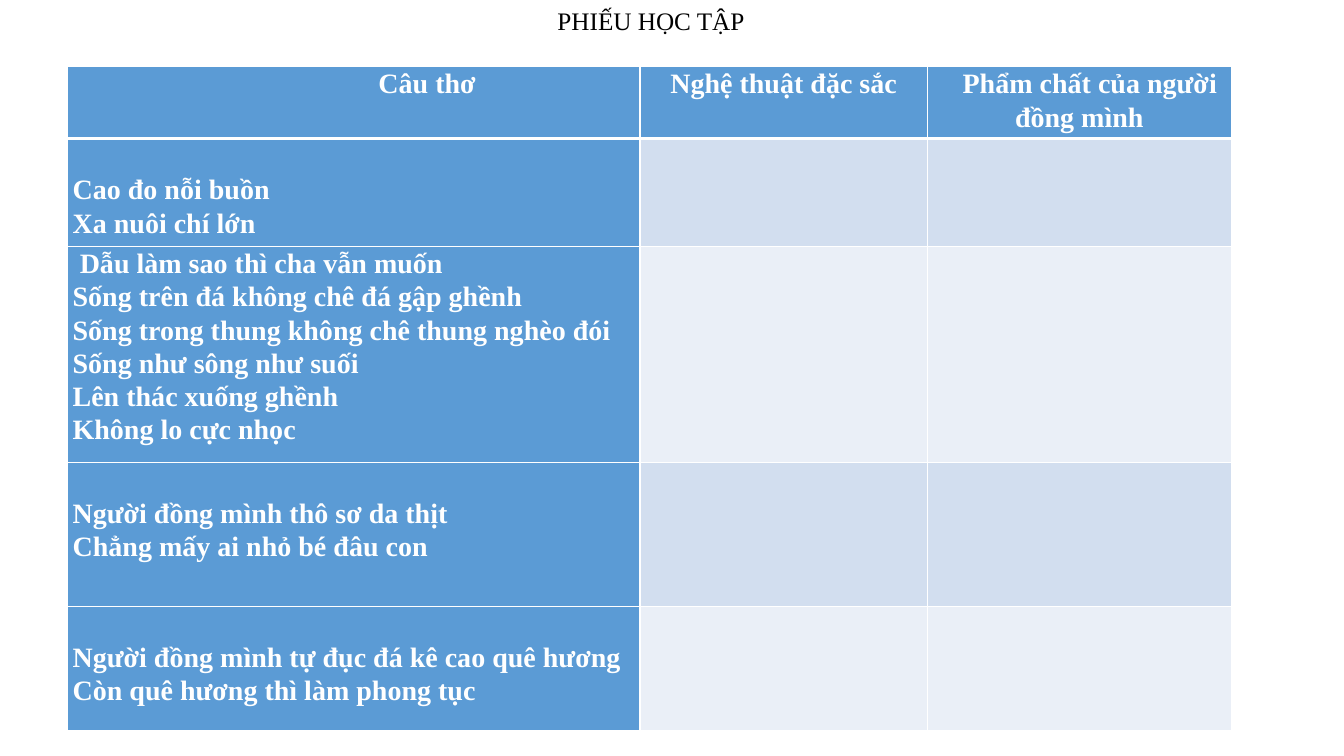
from pptx import Presentation
from pptx.dml.color import RGBColor
from pptx.enum.text import MSO_AUTO_SIZE as AutoSize, PP_ALIGN as Align
from pptx.oxml import parse_xml
from pptx.oxml.ns import nsdecls
from pptx.util import Cm, Pt

BLUE, WHITE, BLACK = "5B9BD5", "FFFFFF", "000000"
BANDS = ("D2DEEF", "EAEFF7")

COL_WIDTHS = (14.43, 7.24, 7.66)
ROW_HEIGHTS = (1.78, 2.72, 5.42, 3.63, 3.13)

# Heading and first-line indent
HEADINGS = [
    ("Câu thơ", 3.7),
    ("Nghệ thuật đặc sắc", 0),
    ("Phẩm chất của người đồng mình", 0.53),
]

# Verses, space above them and first-line indent
VERSES = [
    ("Cao đo nỗi buồn\nXa nuôi chí lớn", 0.86, 0),
    ("Dẫu làm sao thì cha vẫn muốn\n"
     "Sống trên đá không chê đá gập ghềnh\n"
     "Sống trong thung không chê thung nghèo đói\n"
     "Sống như sông như suối\n"
     "Lên thác xuống ghềnh\n"
     "Không lo cực nhọc", 0, 0.18),
    ("Người đồng mình thô sơ da thịt\nChẳng mấy ai nhỏ bé đâu con", 0.86, 0),
    ("Người đồng mình tự đục đá kê cao quê hương\n"
     "Còn quê hương thì làm phong tục", 0.86, 0),
]


def rgb(value):
    return RGBColor.from_string(value)


def write(tf, text, font="Times New Roman", size=20, color=WHITE, bold=True,
          align=Align.LEFT, spacing=1.07, indent=0):
    """Write one paragraph per line; the indent applies to the first."""
    for i, line in enumerate(text.split("\n")):
        p = tf.add_paragraph() if i else tf.paragraphs[0]
        p.alignment, p.line_spacing = align, spacing
        if indent and i == 0:
            p._p.get_or_add_pPr().set("indent", str(Cm(indent)))
        r = p.add_run()
        r.text = line
        r.font.name, r.font.size, r.font.bold = font, Pt(size), bold
        r.font.color.rgb = rgb(color)


class Worksheet:
    def __init__(self, prs):
        self.s = prs.slides.add_slide(prs.slide_layouts[6])

    def title(self, text, x, y, w, h):
        tf = self.s.shapes.add_textbox(Cm(x), Cm(y), Cm(w), Cm(h)).text_frame
        tf.word_wrap = False
        tf.auto_size = AutoSize.SHAPE_TO_FIT_TEXT
        write(tf, text, size=18, color=BLACK, bold=False, spacing=1, indent=0.16)

    def table(self, x, y, widths, heights):
        table = self.s.shapes.add_table(
            len(heights), len(widths), Cm(x), Cm(y),
            Cm(sum(widths)), Cm(sum(heights))).table
        for col, w in zip(table.columns, widths):
            col.width = Cm(w)
        for row, h in zip(table.rows, heights):
            row.height = Cm(h)
        return table

    def cell(self, cell, fill, top=1, bottom=1, space=0):
        cell.margin_left = cell.margin_right = Cm(0.13)
        cell.margin_top, cell.margin_bottom = Cm(space), 0
        # Borders come before the fill in the cell properties
        for side, width in zip("LRTB", (1, 1, top, bottom)):
            cell._tc.get_or_add_tcPr().append(parse_xml(
                f'<a:ln{side} {nsdecls("a")} w="{Pt(width)}"><a:solidFill>'
                f'<a:srgbClr val="{WHITE}"/></a:solidFill></a:ln{side}>'))
        cell.fill.solid()
        cell.fill.fore_color.rgb = rgb(fill)
        return cell.text_frame


def main():
    prs = Presentation()
    prs.slide_width, prs.slide_height = Cm(33.87), Cm(19.05)
    sheet = Worksheet(prs)

    sheet.title("PHIẾU HỌC TẬP", 13.64, 0, 5.44, 1.02)
    table = sheet.table(1.7, 1.68, COL_WIDTHS, ROW_HEIGHTS)

    # Header row
    for col, (text, indent) in enumerate(HEADINGS):
        tf = sheet.cell(table.cell(0, col), BLUE, bottom=3)
        write(tf, text, align=Align.CENTER, indent=indent)

    # Verse rows, with blank answer cells
    for row, (text, space, indent) in enumerate(VERSES, 1):
        top = 3 if row == 1 else 1
        tf = sheet.cell(table.cell(row, 0), BLUE, top=top, space=space)
        write(tf, text, indent=indent)
        for col in (1, 2):
            sheet.cell(table.cell(row, col), BANDS[(row - 1) % 2], top=top)

    prs.save("out.pptx")


if __name__ == "__main__":
    main()
